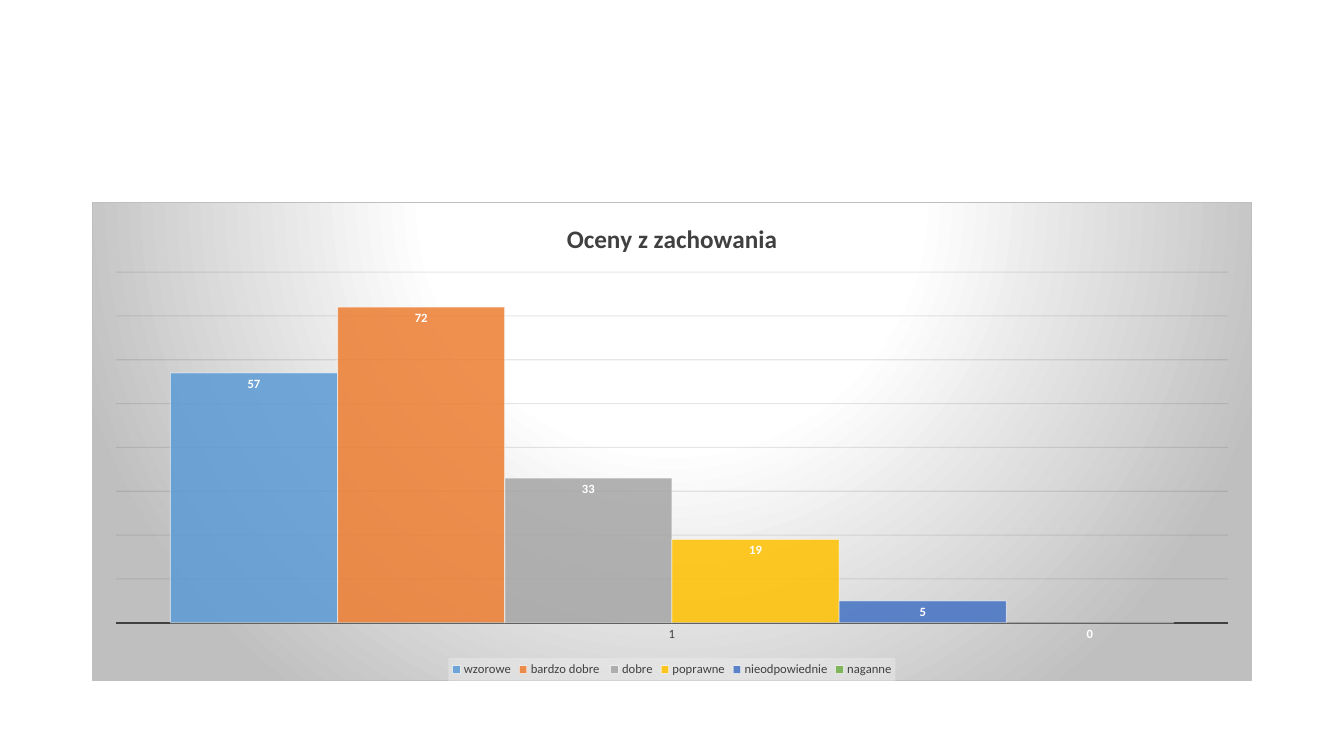
from pptx import Presentation
from pptx import util as u
from pptx.chart.data import CategoryChartData
from pptx.dml.color import RGBColor
from pptx.enum import chart as ch
from pptx.oxml import parse_xml
from pptx.oxml.ns import nsdecls

PX = 9525  # EMU per px, 96 px to the inch
COLORS = {
    "white": "FFFFFF", "edge": "BFBFBF", "text": "404040", "grid": "0D0D0D",
    "legend": "F2F2F2",
    "wzorowe": "5B9BD5", "bardzo dobre ": "ED7D31", "dobre": "A5A5A5",
    "poprawne": "FFC000", "nieodpowiednie": "4472C4", "naganne": "70AD47",
}
GRADES = {"wzorowe": 57, "bardzo dobre ": 72, "dobre": 33,
          "poprawne": 19, "nieodpowiednie": 5, "naganne": 0}


def rgb(name):
    return RGBColor.from_string(COLORS[name])


def set_font(font, size, color, bold=False):
    font.name, font.size, font.bold = "Calibri", u.Pt(size), bold
    font.color.rgb = rgb(color)


def set_line(line, color, width):
    line.color.rgb = rgb(color)
    line.width = u.Pt(width)


def set_alpha(root, path, percent):
    for clr in root.xpath(path + "/a:solidFill/a:srgbClr"):
        clr.append(parse_xml(f'<a:alpha {nsdecls("a")} val="{percent * 1000}"/>'))


def chart_background():
    stops = "".join(
        f'<a:gs pos="{pos * 1000}"><a:srgbClr val="{COLORS[name]}"/></a:gs>'
        for pos, name in ((0, "white"), (39, "white"), (100, "edge")))
    return parse_xml(
        f'<c:spPr {nsdecls("c", "a")}><a:gradFill><a:gsLst>{stops}</a:gsLst>'
        '<a:path path="circle"><a:fillToRect l="50000" t="-80000" r="50000" b="180000"/>'
        f'</a:path></a:gradFill><a:ln w="{u.Pt(0.75)}"><a:solidFill>'
        f'<a:srgbClr val="{COLORS["edge"]}"/></a:solidFill></a:ln></c:spPr>')


def legend_background():
    return parse_xml(
        f'<c:spPr {nsdecls("c", "a")}><a:solidFill>'
        f'<a:srgbClr val="{COLORS["legend"]}"/></a:solidFill></c:spPr>')


def add_grades_chart(slide, x, y, w, h):
    data = CategoryChartData()
    data.categories = ["1"]
    for name, count in GRADES.items():
        data.add_series(name, [count])
    chart = slide.shapes.add_chart(
        ch.XL_CHART_TYPE.COLUMN_CLUSTERED,
        *(v * PX for v in (x, y, w, h)), data).chart
    set_font(chart.font, 10, "text")

    # Title
    chart.has_title = True
    tf = chart.chart_title.text_frame
    tf.text = "Oceny z zachowania"
    set_font(tf.paragraphs[0].font, 18, "text", True)
    chart.chart_title.include_in_layout = False

    # Axes
    cat = chart.category_axis
    cat.major_tick_mark = cat.minor_tick_mark = ch.XL_TICK_MARK.NONE
    set_font(cat.tick_labels.font, 9, "text")
    set_line(cat.format.line, "text", 1.5)
    val = chart.value_axis
    val.minimum_scale, val.maximum_scale, val.major_unit = 0, 80, 10
    val.has_major_gridlines = True
    set_line(val.major_gridlines.format.line, "grid", 0.75)
    val.visible = False

    # Columns
    plot = chart.plots[0]
    plot.gap_width, plot.overlap = 65, 0
    plot.vary_by_categories = False
    for series in plot.series:
        series.format.fill.solid()
        series.format.fill.fore_color.rgb = rgb(series.name)
        set_line(series.format.line, "white", 0.75)
        labels = series.data_labels
        labels.show_value = True
        labels.position = ch.XL_LABEL_POSITION.INSIDE_END
        set_font(labels.font, 9, "white", True)

    # Legend
    chart.has_legend = True
    legend = chart.legend
    legend.position = ch.XL_LEGEND_POSITION.BOTTOM
    legend.include_in_layout = False
    set_font(legend.font, 9, "text")

    # Backgrounds and transparency
    root = chart._chartSpace
    root.xpath("c:txPr")[0].addprevious(chart_background())
    root.xpath(".//c:legend/c:txPr")[0].addprevious(legend_background())
    set_alpha(root, ".//c:ser/c:spPr", 85)
    set_alpha(root, ".//c:ser/c:spPr/a:ln", 50)
    set_alpha(root, ".//c:majorGridlines/c:spPr/a:ln", 10)
    set_alpha(root, ".//c:legend/c:spPr", 39)


def main():
    prs = Presentation()
    prs.slide_width, prs.slide_height = 1280 * PX, 720 * PX
    slide = prs.slides.add_slide(prs.slide_layouts[6])
    add_grades_chart(slide, 88, 192, 1104, 457)
    prs.save("out.pptx")


if __name__ == "__main__":
    main()
